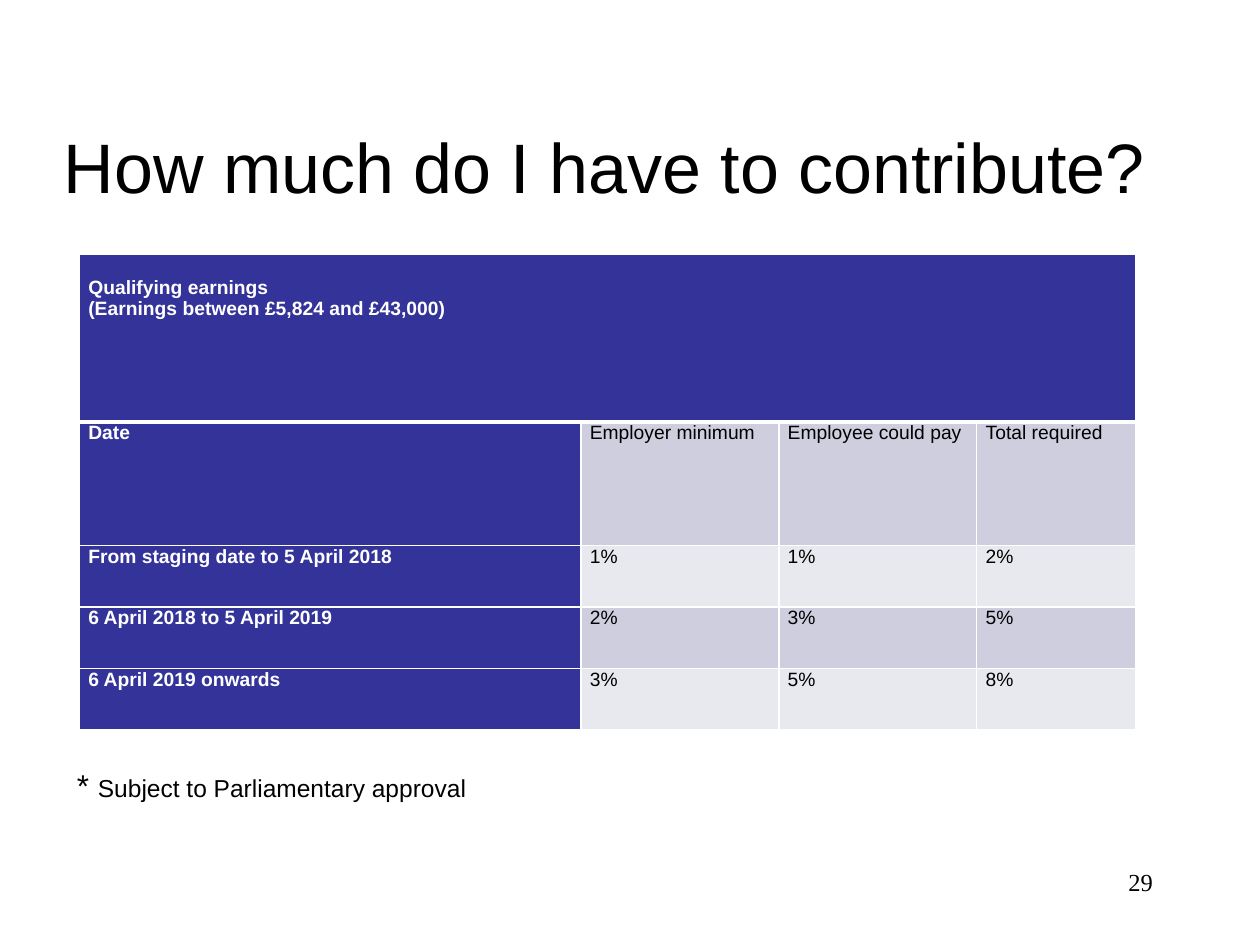
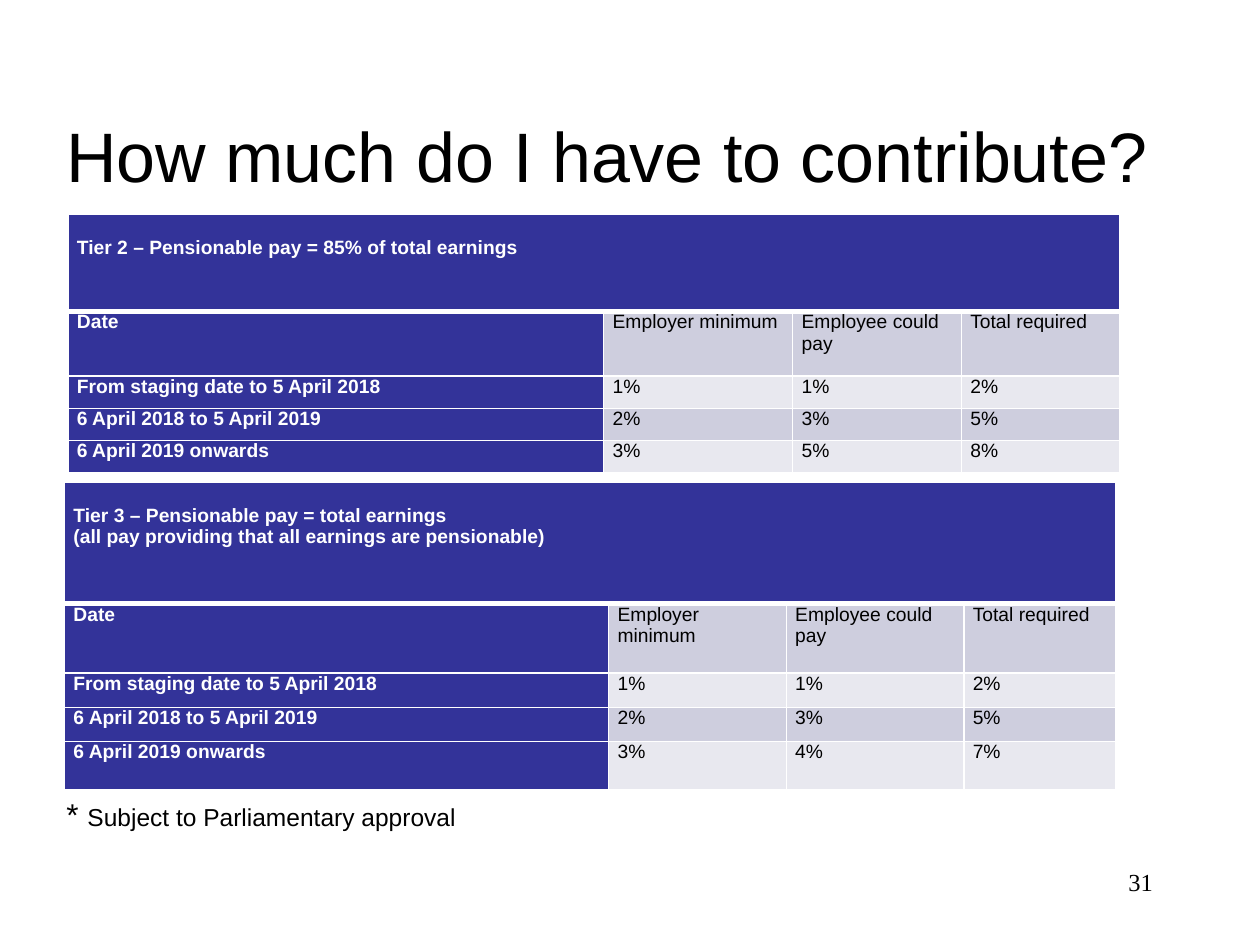
from lxml import etree
from pptx import Presentation
from pptx import util as u
from pptx.dml.color import RGBColor
from pptx.enum import text
from pptx.oxml.ns import qn

COLOURS = {"navy": "333399", "lilac": "CECEDE", "pale": "E8E8EF",
           "white": "FFFFFF", "black": "000000"}
TITLE = {"name": "Arial", "size": u.Pt(40)}
STAR = {"name": "Arial", "size": u.Pt(18)}
NOTE = {"name": "Arial", "size": u.Pt(14)}
NUMBER = {"name": "Times New Roman", "size": u.Pt(14)}
BODY = {"name": "Arial", "size": u.Pt(11), "bold": False}
HEADING = {**BODY, "bold": True}
CELL_MARGINS = {"margin_left": u.Cm(0.18), "margin_right": u.Cm(0.18),
                "margin_top": 0, "margin_bottom": 0}
BANNER_TOP = u.Cm(0.45)

COLUMN_HEADS = ["Date", "Employer minimum", "Employee could pay", "Total required"]
PERIODS = ["From staging date to 5 April 2018", "6 April 2018 to 5 April 2019",
           "6 April 2019 onwards"]
STANDARD_RATES = [("1%", "1%", "2%"), ("2%", "3%", "5%"), ("3%", "5%", "8%")]
TIER_3_RATES = STANDARD_RATES[:2] + [("3%", "4%", "7%")]

# All positions and sizes are in centimetres
SLIDES = [
    {"number": "29", "title_at": (1.04, 1.75), "note_at": (1.3, 15.32), "tables": [
        {"banner": ["Qualifying earnings", "(Earnings between £5,824 and £43,000)"],
         "at": (1.6, 5.13), "rates": STANDARD_RATES,
         "widths": [10.11, 3.99, 3.99, 3.2],
         "heights": [3.38, 2.49, 1.24, 1.24, 1.24]}]},
    {"number": "31", "title_at": (1.09, 1.52), "note_at": (1.09, 15.9), "tables": [
        {"banner": ["Tier 2 – Pensionable pay = 85% of total earnings"],
         "at": (1.37, 4.32), "rates": STANDARD_RATES,
         "widths": [10.8, 3.81, 3.4, 3.2],
         "heights": [1.96, 1.3, 0.65, 0.65, 0.65]},
        {"banner": ["Tier 3 – Pensionable pay = total earnings",
                    "(all pay providing that all earnings are pensionable)"],
         "at": (1.3, 9.73), "rates": TIER_3_RATES,
         "widths": [10.97, 3.58, 3.58, 3.07],
         "heights": [2.44, 1.4, 0.69, 0.69, 0.97]}]},
]


def add_span(para, words, style, colour="black"):
    span = para.add_run()
    span.text = words
    for key, value in style.items():
        setattr(span.font, key, value)
    span.font.color.rgb = RGBColor.from_string(COLOURS[colour])


def add_text_box(page, at, size, spans, **para_format):
    """Add a wrapping one-paragraph box, middle-anchored, of (words, style) spans."""
    box = page.shapes.add_textbox(*map(u.Cm, at + size))
    box.text_frame.word_wrap = True
    box.text_frame.vertical_anchor = text.MSO_ANCHOR.MIDDLE
    para = box.text_frame.paragraphs[0]
    for key, value in para_format.items():
        setattr(para, key, value)
    for words, style in spans:
        add_span(para, words, style)
    return box


deck = Presentation()
deck.slide_width, deck.slide_height = u.Cm(25.4), u.Cm(19.05)

for content in SLIDES:
    page = deck.slides.add_slide(deck.slide_layouts[6])
    number = add_text_box(page, (18.21, 17.35), (5.28, 1.27),
                          [(content["number"], NUMBER)], alignment=text.PP_ALIGN.RIGHT)
    number.text_frame.vertical_anchor = text.MSO_ANCHOR.TOP
    add_text_box(page, content["title_at"], (22.86, 3.18),
                 [("How much do I have to contribute?", TITLE)])

    for plan in content["tables"]:
        widths, heights = plan["widths"], plan["heights"]
        size = (sum(widths), sum(heights))
        table = page.shapes.add_table(len(heights), len(widths),
                                      *map(u.Cm, plan["at"] + size)).table
        table.horz_banding = False
        for column, width in zip(table.columns, widths):
            column.width = u.Cm(width)
        for row, height in zip(table.rows, heights):
            row.height = u.Cm(height)
        table.cell(0, 0).merge(table.cell(0, len(widths) - 1))

        rows = [COLUMN_HEADS]
        rows += [[period, *rates] for period, rates in zip(PERIODS, plan["rates"])]
        grid = [[plan["banner"]] + [[]] * (len(widths) - 1)]
        grid += [[[words] for words in row] for row in rows]

        for r, row in enumerate(grid):
            for c, lines in enumerate(row):
                cell = table.cell(r, c)
                for key, value in CELL_MARGINS.items():
                    setattr(cell, key, value)
                if r == 0:
                    cell.margin_top = BANNER_TOP

                # The rule under the banner is thicker than the rest
                for side in "LRTB":
                    thick = (r, side) in [(0, "B"), (1, "T")]
                    line = etree.SubElement(cell._tc.get_or_add_tcPr(), qn(f"a:ln{side}"),
                                            w=str(u.Pt(3 if thick else 1)))
                    fill = etree.SubElement(line, qn("a:solidFill"))
                    etree.SubElement(fill, qn("a:srgbClr"), val=COLOURS["white"])

                heading = r == 0 or c == 0
                shade = "navy" if heading else "lilac" if r % 2 else "pale"
                cell.fill.solid()
                cell.fill.fore_color.rgb = RGBColor.from_string(COLOURS[shade])
                for i, words in enumerate(lines):
                    frame = cell.text_frame
                    para = frame.add_paragraph() if i else frame.paragraphs[0]
                    add_span(para, words, HEADING if heading else BODY,
                             "white" if heading else "black")

    add_text_box(page, content["note_at"], (13.41, 1.02),
                 [("* ", STAR), ("Subject to Parliamentary approval", NOTE)])

deck.save("out.pptx")
